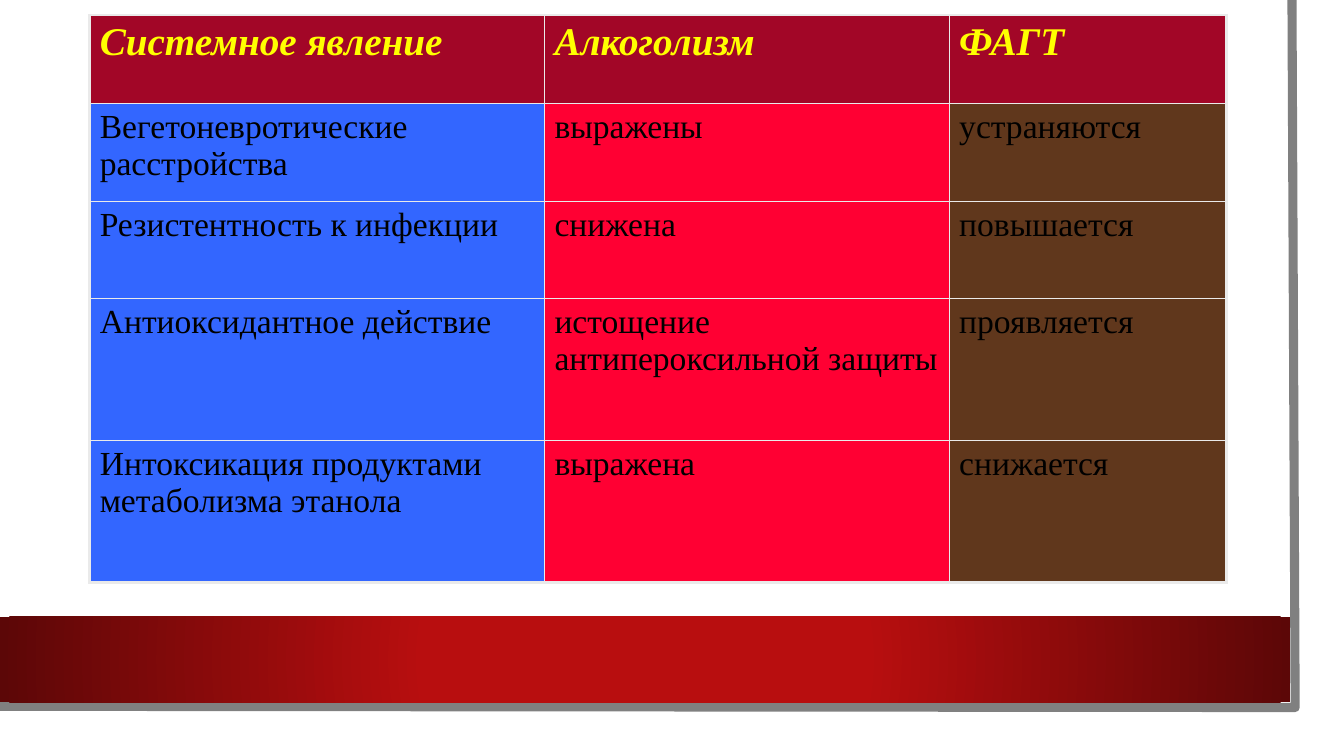
import lxml.etree
import pptx
import pptx.dml.color
import pptx.enum.shapes
import pptx.oxml
import pptx.oxml.ns
import pptx.util

Cm, Pt = pptx.util.Cm, pptx.util.Pt
RGBColor = pptx.dml.color.RGBColor

WHITE = RGBColor(0xFF, 0xFF, 0xFF)
BLACK = RGBColor(0, 0, 0)
GREY = RGBColor(0x80, 0x80, 0x80)
BORDER = RGBColor(0xEA, 0xEA, 0xEA)
YELLOW = RGBColor(0xFF, 0xFF, 0)
HEADER = RGBColor(0xA2, 0x06, 0x27)
BAND = RGBColor(0xB8, 0x0E, 0x0F)
BAND_EDGE = RGBColor(0x5C, 0x07, 0x07)
COLUMN_FILLS = [RGBColor(0x33, 0x66, 0xFF), RGBColor(0xFF, 0, 0x33), RGBColor(0x60, 0x37, 0x1C)]

FONT = "Times New Roman"
ROWS = [
    ("Системное явление", "Алкоголизм", "ФАГТ"),
    ("Вегетоневротические расстройства", "выражены", "устраняются"),
    ("Резистентность к инфекции", "снижена", "повышается"),
    ("Антиоксидантное действие", "истощение антипероксильной защиты", "проявляется"),
    ("Интоксикация продуктами метаболизма этанола", "выражена", "снижается"),
]
COLUMN_SHARES = [0.4, 0.356, 0.244]
ROW_SHARES = [0.156, 0.172, 0.172, 0.25, 0.25]


def add_rect(slide, left, top, width, height):
    """Add a white rectangle without outline or shadow."""
    sp = slide.shapes.add_shape(
        pptx.enum.shapes.MSO_SHAPE.RECTANGLE, left, top, width, height)
    sp.shadow.inherit = False
    sp.fill.solid()
    sp.fill.fore_color.rgb = WHITE
    sp.line.fill.background()
    return sp


def add_frame(slide, left, top, width, height):
    """Draw the slightly skewed grey edge along the right and bottom of the box."""
    right, bottom = left + width, top + height
    builder = slide.shapes.build_freeform(right - Cm(0.08), top, scale=1.0)
    builder.add_line_segments([(right, bottom), (left, bottom - Cm(0.03))], close=False)
    sp = builder.convert_to_shape()
    sp.shadow.inherit = False
    sp.fill.background()
    sp.line.color.rgb = GREY
    sp.line.width = Pt(6.5)


def add_band(slide, left, top, width, height):
    """Draw the red band that darkens from its centre outwards."""
    sp = add_rect(slide, left, top, width, height)
    solid = sp.element.spPr.find(pptx.oxml.ns.qn("a:solidFill"))
    gradient = pptx.oxml.parse_xml(
        f'<a:gradFill {pptx.oxml.ns.nsdecls("a")} rotWithShape="1"><a:gsLst>'
        f'<a:gs pos="34000"><a:srgbClr val="{BAND}"/></a:gs>'
        f'<a:gs pos="100000"><a:srgbClr val="{BAND_EDGE}"/></a:gs></a:gsLst>'
        '<a:path path="circle">'
        '<a:fillToRect l="50000" t="50000" r="50000" b="50000"/></a:path></a:gradFill>')
    solid.getparent().replace(solid, gradient)


def set_borders(cell, widths):
    """Set the cell borders from a mapping of side letter to width in points."""
    tcPr = cell._tc.get_or_add_tcPr()
    for side, width in widths.items():
        ln = lxml.etree.SubElement(tcPr, pptx.oxml.ns.qn(f"a:ln{side}"), w=str(Pt(width)))
        fill = lxml.etree.SubElement(ln, pptx.oxml.ns.qn("a:solidFill"))
        lxml.etree.SubElement(fill, pptx.oxml.ns.qn("a:srgbClr"), val=str(BORDER))


def add_comparison(slide, left, top, width, height):
    """Fill the box with the comparison table."""
    last_row, last_col = len(ROWS) - 1, len(COLUMN_SHARES) - 1
    table = slide.shapes.add_table(
        len(ROWS), len(COLUMN_SHARES), left, top, width, height).table
    table.first_row = table.horz_banding = False
    for column, share in zip(table.columns, COLUMN_SHARES):
        column.width = int(width * share)
    for row, share in zip(table.rows, ROW_SHARES):
        row.height = int(height * share)
    for i, texts in enumerate(ROWS):
        for j, text in enumerate(texts):
            cell = table.cell(i, j)
            edges = {"L": j == 0, "R": j == last_col, "T": i == 0, "B": i == last_row}
            set_borders(cell, {side: 2.25 if outer else 1 for side, outer in edges.items()})
            header = i == 0
            cell.fill.solid()
            cell.fill.fore_color.rgb = HEADER if header else COLUMN_FILLS[j]
            cell.text_frame.text = text
            font = cell.text_frame.paragraphs[0].runs[0].font
            font.name = FONT
            font.size = Pt(28 if header else 24)
            font.bold = font.italic = header
            font.color.rgb = YELLOW if header else BLACK


def main():
    """Build the slide and save it."""
    prs = pptx.Presentation()
    prs.slide_width, prs.slide_height = Cm(33.87), Cm(19.05)
    slide = prs.slides.add_slide(prs.slide_layouts[6])
    add_rect(slide, 0, 0, Cm(33.27), Cm(18.47))
    add_frame(slide, Cm(-0.08), 0, Cm(32.72), Cm(17.83))
    add_band(slide, 0, Cm(15.54), Cm(32.51), Cm(2.16))
    add_comparison(slide, Cm(2.26), Cm(0.38), Cm(28.65), Cm(14.3))
    prs.save("out.pptx")


if __name__ == "__main__":
    main()
